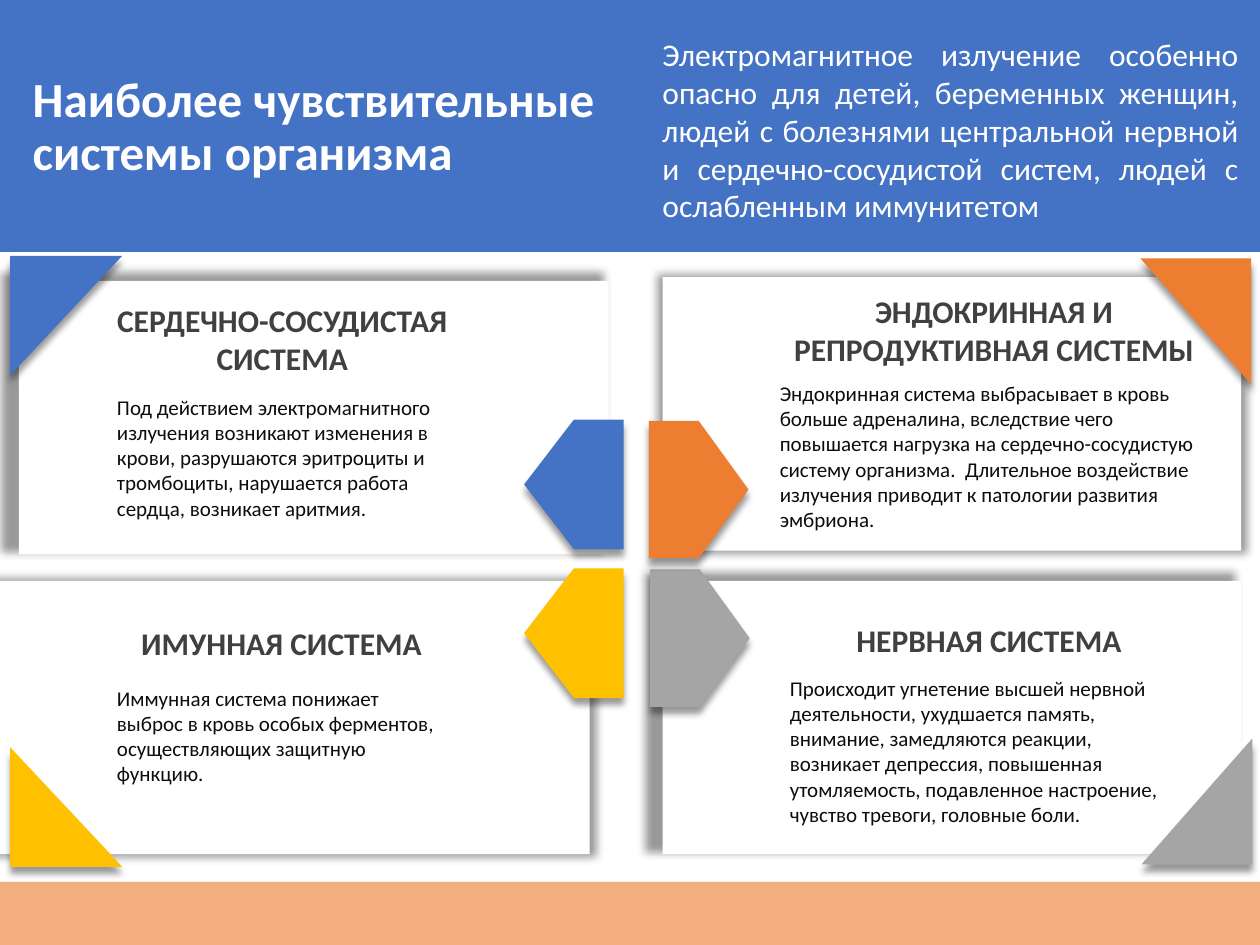
from dataclasses import dataclass

from lxml import etree
from pptx import Presentation
from pptx.dml.color import RGBColor
from pptx.enum.shapes import MSO_SHAPE as Shape
from pptx.enum.text import MSO_ANCHOR as Anchor, MSO_AUTO_SIZE as AutoSize, PP_ALIGN as Align
from pptx.oxml.ns import qn
from pptx.util import Inches, Pt

COLORS = {
    "blue": "4472C4", "orange": "ED7D31", "yellow": "FFC000", "gray": "A5A5A5",
    "white": "FFFFFF", "heading": "404040", "body": "0D0D0D", "shadow": "000000",
}
FONT = "Calibri"
HEADING = {"name": FONT, "size": Pt(18), "bold": True}
BODY = {"name": FONT, "size": Pt(12)}
INTRO = {"name": FONT, "size": Pt(18)}
TITLE = {"name": FONT, "size": Pt(28), "bold": True}

CARD_SHADOW = {"blurRad": Pt(5), "sx": 102000, "sy": 102000, "algn": "ctr"}
ACCENT_SHADOW = {"blurRad": Pt(4), "dist": Pt(4), "dir": 5400000, "algn": "t"}


@dataclass(frozen=True)
class Box:
    left: float
    top: float
    width: float
    height: float

    def lengths(self) -> list:
        return [Inches(v) for v in (self.left, self.top, self.width, self.height)]


@dataclass(frozen=True)
class Piece:
    box: Box
    rotation: int = 0
    flipped: bool = False


@dataclass(frozen=True)
class BodySystem:
    color: str
    card: Piece
    plate: Piece
    corner: Piece
    heading: str
    heading_box: Box
    effect: str
    effect_box: Box


SYSTEMS = [
    BodySystem(
        "yellow",
        Piece(Box(0, 4.61, 4.68, 2.17)),
        Piece(Box(4.16, 4.51, 0.79, 1.03), 180),
        Piece(Box(0.08, 5.93, 0.89, 0.95)),
        "ИМУННАЯ СИСТЕМА", Box(0.83, 4.9, 2.81, 0.4),
        "Иммунная система понижает выброс в кровь особых ферментов, "
        "осуществляющих защитную функцию.", Box(0.83, 5.39, 2.82, 0.91)),
    BodySystem(
        "gray",
        Piece(Box(5.26, 4.61, 4.59, 2.17), flipped=True),
        Piece(Box(5.16, 4.52, 0.79, 1.09), flipped=True),
        Piece(Box(9, 5.92, 1, 0.88), 270),
        "НЕРВНАЯ СИСТЕМА", Box(6.18, 4.88, 3.34, 0.4),
        "Происходит угнетение высшей нервной деятельности, ухудшается память, "
        "внимание, замедляются реакции, возникает депрессия, повышенная "
        "утомляемость, подавленное настроение, чувство тревоги, головные боли.",
        Box(6.17, 5.31, 3.35, 1.31)),
    BodySystem(
        "blue",
        Piece(Box(0.15, 2.23, 4.68, 2.17), flipped=True),
        Piece(Box(4.16, 3.33, 0.79, 1.03), 180, True),
        Piece(Box(0.05, 2.06, 0.95, 0.89), 90),
        "СЕРДЕЧНО-СОСУДИСТАЯ СИСТЕМА", Box(0.83, 2.34, 2.82, 0.71),
        "Под действием электромагнитного излучения возникают изменения в крови, "
        "разрушаются эритроциты и тромбоциты, нарушается работа сердца, "
        "возникает аритмия.", Box(0.83, 3.08, 2.82, 1.11)),
    BodySystem(
        "orange",
        Piece(Box(5.26, 2.2, 4.59, 2.17)),
        Piece(Box(5.15, 3.34, 0.79, 1.09)),
        Piece(Box(9.05, 2.05, 0.88, 1), 180),
        "ЭНДОКРИННАЯ И РЕПРОДУКТИВНАЯ СИСТЕМЫ", Box(6.1, 2.27, 3.58, 1.01),
        "Эндокринная система выбрасывает в кровь больше адреналина, вследствие "
        "чего повышается нагрузка на сердечно-сосудистую систему организма.  "
        "Длительное воздействие излучения приводит к патологии развития эмбриона.",
        Box(6.09, 2.97, 3.59, 1.31)),
]


def add_alpha(color_element, percent: int) -> None:
    etree.SubElement(color_element, qn("a:alpha"), val=str(percent * 1000))


def add_piece(shapes, kind: Shape, piece: Piece, color: str, shadow: dict | None = None):
    shape = shapes.add_shape(kind, *piece.box.lengths())
    shape.rotation = piece.rotation
    if piece.flipped:
        shape._element.spPr.find(qn("a:xfrm")).set("flipV", "1")
    shape.fill.solid()
    shape.fill.fore_color.rgb = RGBColor.from_string(COLORS[color])
    shape.line.fill.background()
    shape.shadow.inherit = False
    if shadow:
        effects = shape._element.spPr.find(qn("a:effectLst"))
        outer = etree.SubElement(effects, qn("a:outerShdw"), rotWithShape="0")
        for key, value in shadow.items():
            outer.set(key, str(value))
        add_alpha(etree.SubElement(outer, qn("a:srgbClr"), val=COLORS["shadow"]), 40)
    return shape


def write(frame, text: str, style: dict, color: str, align: Align):
    frame.word_wrap = True
    paragraph = frame.paragraphs[0]
    paragraph.alignment = align
    run = paragraph.add_run()
    run.text = text
    for key, value in style.items():
        setattr(run.font, key, value)
    run.font.color.rgb = RGBColor.from_string(COLORS[color])
    return paragraph


def add_text(shapes, box: Box, text: str, style: dict, color: str, align: Align) -> None:
    frame = shapes.add_textbox(*box.lengths()).text_frame
    write(frame, text, style, color, align)
    frame.auto_size = AutoSize.SHAPE_TO_FIT_TEXT


def add_title(shapes, box: Box, text: str) -> None:
    title = shapes.title
    title.left, title.top, title.width, title.height = box.lengths()
    frame = title.text_frame
    write(frame, text, TITLE, "white", Align.LEFT).line_spacing = 0.9
    frame.auto_size = AutoSize.NONE
    frame.vertical_anchor = Anchor.MIDDLE
    shapes._spTree.append(title._element)  # in front of the bands


def main() -> None:
    deck = Presentation()
    deck.slide_width, deck.slide_height = Inches(10), Inches(7.5)
    shapes = deck.slides.add_slide(deck.slide_layouts[5]).shapes

    add_piece(shapes, Shape.RECTANGLE, Piece(Box(0, 0, 10, 2)), "blue")
    footer = add_piece(shapes, Shape.RECTANGLE, Piece(Box(0, 7, 10, 0.5)), "orange")
    add_alpha(footer._element.spPr.find(qn("a:solidFill"))[0], 62)

    add_title(shapes, Box(0.16, 0.31, 4.84, 1.41),
              "Наиболее чувствительные системы организма")
    add_text(shapes, Box(5.16, 0.23, 4.77, 1.62),
             "Электромагнитное излучение особенно опасно для детей, беременных женщин, "
             "людей с болезнями центральной нервной и сердечно-сосудистой систем, "
             "людей с ослабленным иммунитетом", INTRO, "white", Align.JUSTIFY)

    for system in SYSTEMS:
        add_piece(shapes, Shape.RECTANGLE, system.card, "white", CARD_SHADOW)
        add_piece(shapes, Shape.PENTAGON, system.plate, system.color, ACCENT_SHADOW)
        add_text(shapes, system.heading_box, system.heading, HEADING, "heading", Align.CENTER)
        add_text(shapes, system.effect_box, system.effect, BODY, "body", Align.LEFT)
        add_piece(shapes, Shape.RIGHT_TRIANGLE, system.corner, system.color, ACCENT_SHADOW)

    deck.save("out.pptx")


if __name__ == "__main__":
    main()
